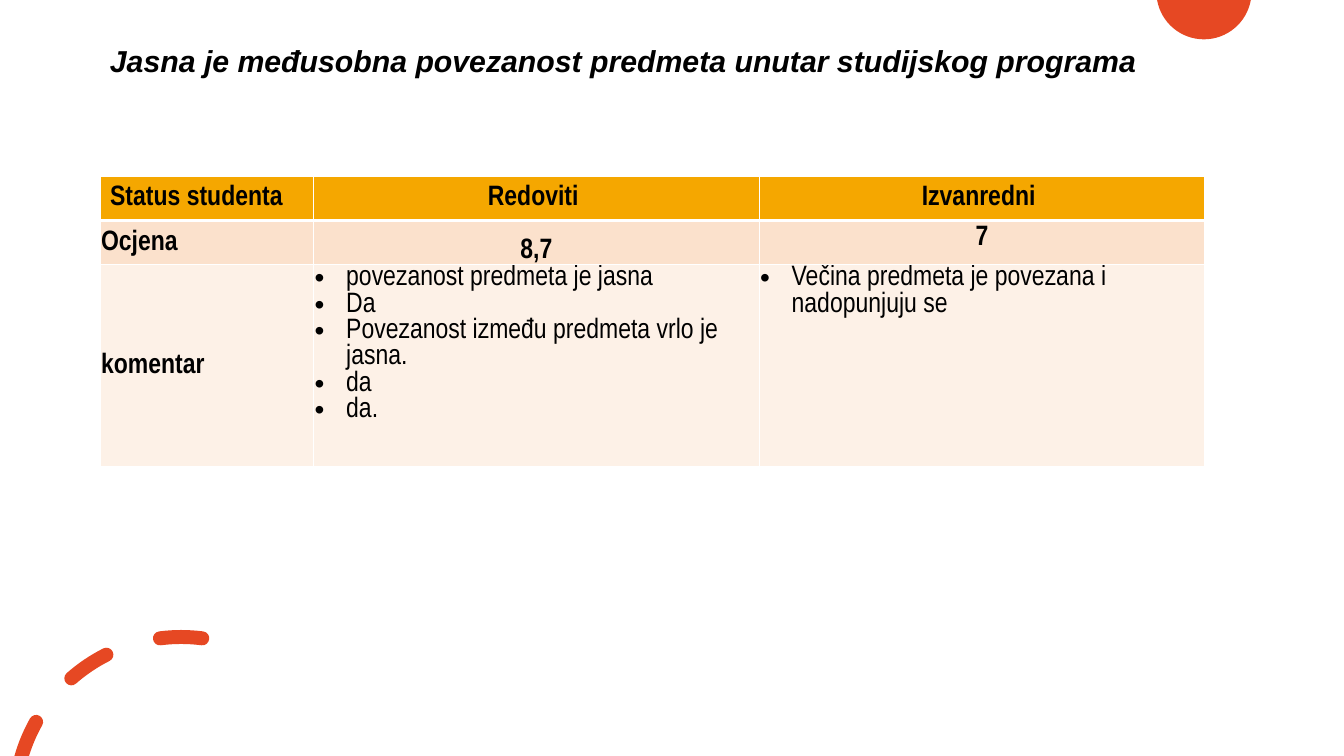
"""Build the slide on how the subjects of a study programme connect."""
from dataclasses import dataclass
from math import acos, cos, degrees, radians, sin, tan

from lxml import etree
from pptx import Presentation
from pptx import util as u
from pptx.dml.color import RGBColor
from pptx.enum import text
from pptx.oxml import ns

Pt = u.Pt
Point = tuple[float, float]
WIDTH, HEIGHT = 960, 540
ACCENT, HEADER, GRADE, COMMENT = "E64823", "F5A700", "FBE1CC", "FDF1E7"
TIGHT = (0.72, 0.72, 0.72, 0)
ROOMY = (7.2, 3.6, 7.2, 3.6)
MIDDLE, TOP, BOTTOM = text.MSO_ANCHOR.MIDDLE, text.MSO_ANCHOR.TOP, text.MSO_ANCHOR.BOTTOM


@dataclass
class Entry:
    """Content and layout of one table cell."""
    lines: list[str]
    fill: str
    margins: tuple[float, float, float, float] = TIGHT
    anchor: text.MSO_ANCHOR = MIDDLE
    centred: bool = False
    bulleted: bool = False
    bottom_border: float = 1


ROWS = [
    [Entry([label], HEADER, ROOMY, centred=centred, bottom_border=3)
     for label, centred in (("Status studenta", False), ("Redoviti ", True), ("Izvanredni ", True))],
    [Entry(["Ocjena"], GRADE),
     Entry(["8,7"], GRADE, anchor=BOTTOM, centred=True),
     Entry(["7"], GRADE, ROOMY, TOP, centred=True)],
    [Entry(["komentar"], COMMENT),
     Entry(["povezanost predmeta je jasna", "Da", "Povezanost između predmeta vrlo je jasna.", "da", "da."],
           COMMENT, anchor=TOP, bulleted=True),
     Entry(["Večina predmeta je povezana i nadopunjuju se"], COMMENT, anchor=TOP, bulleted=True)],
]


def colour(value: str) -> RGBColor:
    """Turn a hex string into a colour."""
    return RGBColor.from_string(value)


def write(para, content: str, *, font: str, size: float, bold: bool = False,
          italic: bool = False, centred: bool = False) -> None:
    """Put one formatted span into a paragraph."""
    para.alignment = text.PP_ALIGN.CENTER if centred else text.PP_ALIGN.LEFT
    span = para.add_run()
    span.text = content
    span.font.name, span.font.size = font, Pt(size)
    span.font.bold, span.font.italic = bold, italic
    span.font.color.rgb = colour("000000")


def add_bullet(para) -> None:
    """Give a paragraph a hanging round bullet."""
    properties = para._p.get_or_add_pPr()
    properties.set("marL", str(Pt(22.5)))
    properties.set("indent", str(-Pt(22.5)))
    etree.SubElement(properties, ns.qn("a:buFont")).set("typeface", "Arial")
    etree.SubElement(properties, ns.qn("a:buChar")).set("char", "•")


def add_borders(cell, bottom: float) -> None:
    """Draw white borders around a cell."""
    properties = cell._tc.get_or_add_tcPr()
    for index, side in enumerate("LRTB"):
        line = etree.Element(ns.qn(f"a:ln{side}"), w=str(Pt(bottom if side == "B" else 1)))
        fill = etree.SubElement(line, ns.qn("a:solidFill"))
        etree.SubElement(fill, ns.qn("a:srgbClr")).set("val", "FFFFFF")
        properties.insert(index, line)


def fill_cell(cell, entry: Entry) -> None:
    """Format a cell and write its lines."""
    cell.fill.solid()
    cell.fill.fore_color.rgb = colour(entry.fill)
    add_borders(cell, entry.bottom_border)
    cell.vertical_anchor = entry.anchor
    cell.margin_left, cell.margin_top, cell.margin_right, cell.margin_bottom = map(Pt, entry.margins)
    for index, content in enumerate(entry.lines):
        para = cell.text_frame.add_paragraph() if index else cell.text_frame.paragraphs[0]
        write(para, content, font="Arial Narrow", size=20, bold=not entry.bulleted, centred=entry.centred)
        if entry.bulleted:
            add_bullet(para)


def on_circle(centre: Point, radius: float, angle: float, along: float = 0) -> Point:
    """Find the point at an angle clockwise from the top, moved along the tangent."""
    turn = radians(angle)
    return (centre[0] + radius * sin(turn) + along * cos(turn),
            centre[1] - radius * cos(turn) + along * sin(turn))


def arc(centre: Point, radius: float, start: float, end: float, pieces: int = 1) -> list[Point]:
    """List the start of an arc, then two handles and an end for each piece."""
    step = (end - start) / pieces
    handle = 4 / 3 * tan(radians(step / 4)) * radius
    points = [on_circle(centre, radius, start)]
    for piece in range(pieces):
        first = start + piece * step
        points += [on_circle(centre, radius, first, handle),
                   on_circle(centre, radius, first + step, -handle),
                   on_circle(centre, radius, first + step)]
    return points


def dash(centre: Point, radius: float, middle: float, half_sweep: float, half_width: float) -> list[Point]:
    """Outline a round-ended curved dash, cut flat where it leaves the slide."""
    start, end = middle - half_sweep, middle + half_sweep
    outer, inner = radius + half_width, radius - half_width
    outer_edge, inner_edge = (-degrees(acos((centre[1] - HEIGHT) / size)) for size in (outer, inner))
    points = arc(centre, outer, max(start, outer_edge), end)
    points += arc(on_circle(centre, radius, end), half_width, end, end + 180, 2)[1:]
    points += arc(centre, inner, end, max(start, inner_edge))[1:]
    if start > outer_edge:
        points += arc(on_circle(centre, radius, start), half_width, start + 180, start + 360, 2)[1:]
    return points


def add_outlines(page, outlines: list[list[Point]]) -> None:
    """Fill closed curved outlines as one shape."""
    contours = [[(Pt(x), Pt(y)) for x, y in outline] for outline in outlines]
    builder = page.shapes.build_freeform(*contours[0][0])
    for index, points in enumerate(contours):
        if index:
            builder.move_to(*points[0])
        builder.add_line_segments(points[1:], close=True)
    shape = builder.convert_to_shape()
    segments = list(shape._element.iter(ns.qn("a:lnTo")))
    for first in range(0, len(segments), 3):
        curve = etree.Element(ns.qn("a:cubicBezTo"))
        segments[first].addprevious(curve)
        for segment in segments[first:first + 3]:
            curve.append(segment[0])
            segment.getparent().remove(segment)
    shape.shadow.inherit = False
    shape.fill.solid()
    shape.fill.fore_color.rgb = colour(ACCENT)
    shape.line.fill.background()


def add_title(page) -> None:
    """Write the slide heading."""
    box = page.shapes.add_textbox(Pt(71.5), Pt(15.8), Pt(828), Pt(58.3))
    box.text_frame.word_wrap = True
    box.text_frame.vertical_anchor = MIDDLE
    para = box.text_frame.paragraphs[0]
    para.line_spacing = 0.9
    write(para, "Jasna je međusobna povezanost predmeta unutar studijskog programa",
          font="Arial", size=21.6, bold=True, italic=True)


def add_grades(page) -> None:
    """Add the table of grades and comments."""
    widths, heights, frame_height = (152.6, 318.2, 318.2), (0, 29.5, 84.2), 207.4
    frame = page.shapes.add_table(len(ROWS), len(widths), Pt(71.5), Pt(126.2),
                                  Pt(sum(widths)), Pt(frame_height))
    table = frame.table
    table.horz_banding = False
    for column, width in zip(table.columns, widths):
        column.width = Pt(width)
    for row, height, entries in zip(table.rows, heights, ROWS):
        row.height = Pt(height)
        for cell, entry in zip(row.cells, entries):
            fill_cell(cell, entry)
    frame.height = Pt(frame_height)


def main() -> None:
    """Build and save the deck."""
    deck = Presentation()
    deck.slide_width, deck.slide_height = Pt(WIDTH), Pt(HEIGHT)
    page = deck.slides.add_slide(deck.slide_layouts[6])
    add_outlines(page, [arc((860, -5.9), 34, 100, 260, 2)])
    add_outlines(page, [dash((129.4, 573.8), 118.8, middle, 7.3, 5) for middle in (-68, -34, 0)])
    add_title(page)
    add_grades(page)
    deck.save("out.pptx")


if __name__ == "__main__":
    main()
